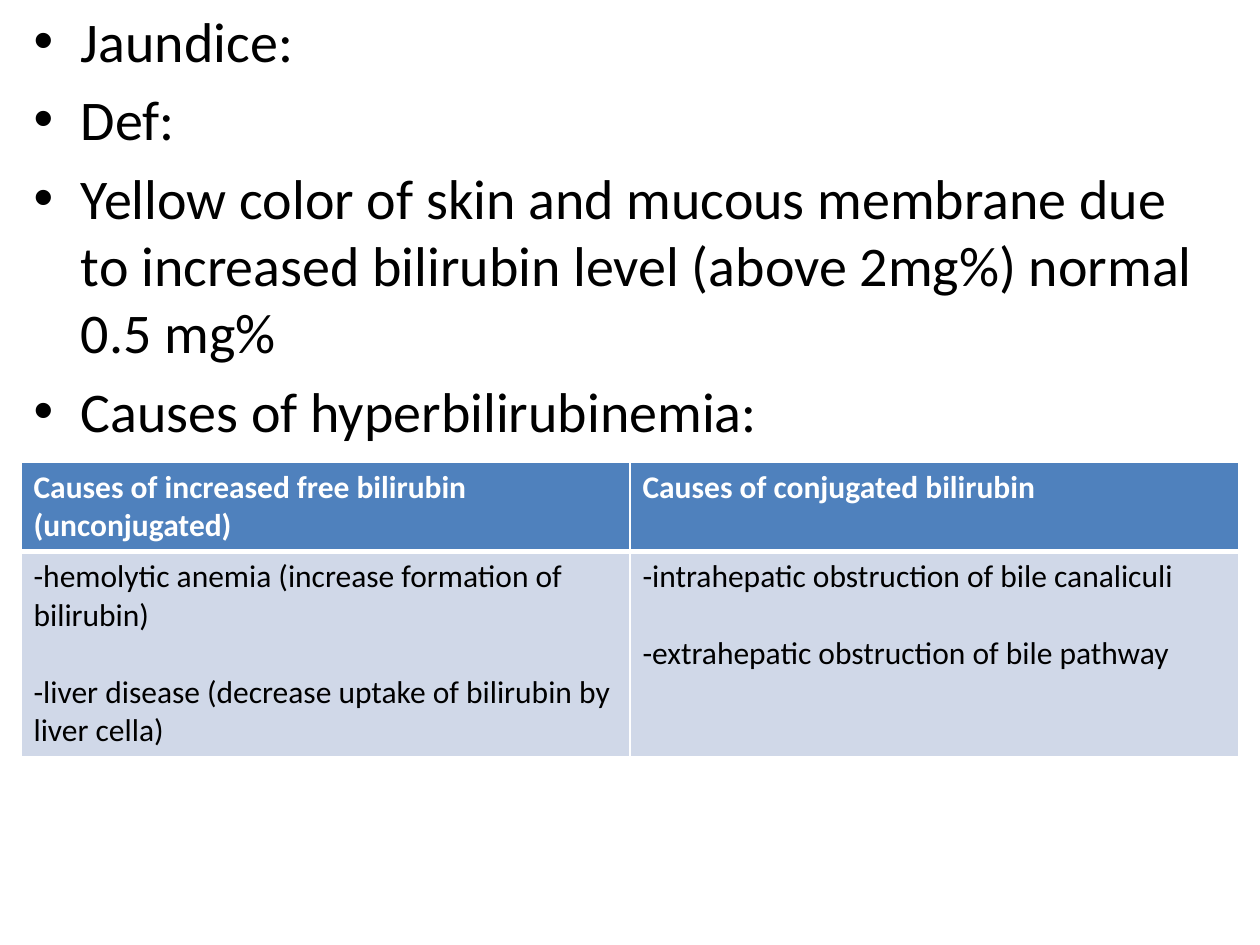
from dataclasses import dataclass

from lxml.etree import SubElement
from pptx import Presentation
from pptx.dml.color import RGBColor as Color
from pptx.enum.text import MSO_AUTO_SIZE as AutoSize
from pptx.oxml.ns import qn
from pptx.util import Pt


@dataclass(frozen=True)
class Theme:
    font: str = "Calibri"
    ink: str = "000000"
    white: str = "FFFFFF"
    header_fill: str = "4F81BD"
    body_fill: str = "D0D8E8"
    bullet_size: int = 32
    table_size: int = 18
    table_gap: int = 22  # one table line
    thin: int = 1
    thick: int = 3


class SlideBuilder:
    def __init__(self, slide, theme):
        self.slide = slide
        self.theme = theme

    def add_span(self, para, text, size, color, bold=False):
        span = para.add_run()
        span.text = text
        font = span.font
        font.name, font.size, font.bold = self.theme.font, Pt(size), bold
        font.color.rgb = Color.from_string(color)

    def add_paragraphs(self, frame, texts, size, color, bold=False, gap=None):
        for index, text in enumerate(texts):
            para = frame.add_paragraph() if index else frame.paragraphs[0]
            if index and gap is not None:
                para.space_before = Pt(gap)
            self.add_span(para, text, size, color, bold)

    def fill_body(self, left, top, width, height, texts):
        """Bullets, indents and spacing come from the layout."""
        box = self.slide.placeholders[1]
        box.left, box.top = Pt(left), Pt(top)
        box.width, box.height = Pt(width), Pt(height)
        frame = box.text_frame
        frame.auto_size = AutoSize.NONE
        self.add_paragraphs(frame, texts, self.theme.bullet_size, self.theme.ink)
        frame.paragraphs[0].space_before = Pt(0)

    def add_borders(self, cell, top, bottom):
        thin = self.theme.thin
        properties = cell._tc.get_or_add_tcPr()
        sides = {"L": thin, "R": thin, "T": top, "B": bottom}
        for side, width in sides.items():
            line = SubElement(properties, qn(f"a:ln{side}"), w=str(Pt(width)))
            fill = SubElement(line, qn("a:solidFill"))
            SubElement(fill, qn("a:srgbClr"), val=self.theme.white)

    def add_table(self, left, top, width, heights, rows):
        theme = self.theme
        table = self.slide.shapes.add_table(
            len(rows), len(rows[0]), Pt(left), Pt(top), Pt(width), Pt(sum(heights))
        ).table
        for row_index, (height, row) in enumerate(zip(heights, rows)):
            header = row_index == 0
            table.rows[row_index].height = Pt(height)
            for column_index, texts in enumerate(row):
                cell = table.cell(row_index, column_index)
                self.add_borders(
                    cell,
                    top=theme.thin if header else theme.thick,
                    bottom=theme.thick if header else theme.thin,
                )
                cell.fill.solid()
                cell.fill.fore_color.rgb = Color.from_string(
                    theme.header_fill if header else theme.body_fill
                )
                self.add_paragraphs(
                    cell.text_frame, texts, theme.table_size,
                    theme.white if header else theme.ink, header, theme.table_gap,
                )


def main():
    deck = Presentation()
    deck.slide_width, deck.slide_height = Pt(720), Pt(540)
    slide = deck.slides.add_slide(deck.slide_layouts[1])

    # The slide has no title
    title = slide.shapes.title.element
    title.getparent().remove(title)
    builder = SlideBuilder(slide, Theme())

    # Definition
    builder.fill_body(12, 0, 690, 540, [
        "Jaundice:",
        "Def:",
        "Yellow color of skin and mucous membrane due to increased "
        "bilirubin level (above 2mg%) normal 0.5 mg%",
        "Causes of hyperbilirubinemia:",
    ])

    # Causes by type of bilirubin
    builder.add_table(12, 264, 696, [50.4, 117], [
        [
            ["Causes of increased free bilirubin (unconjugated)"],
            ["Causes of conjugated bilirubin"],
        ],
        [
            [
                "-hemolytic anemia (increase formation of bilirubin)",
                "-liver disease (decrease uptake of bilirubin by liver cella)",
            ],
            [
                "-intrahepatic obstruction of bile canaliculi",
                "-extrahepatic obstruction of bile pathway",
            ],
        ],
    ])

    deck.save("out.pptx")


if __name__ == "__main__":
    main()
